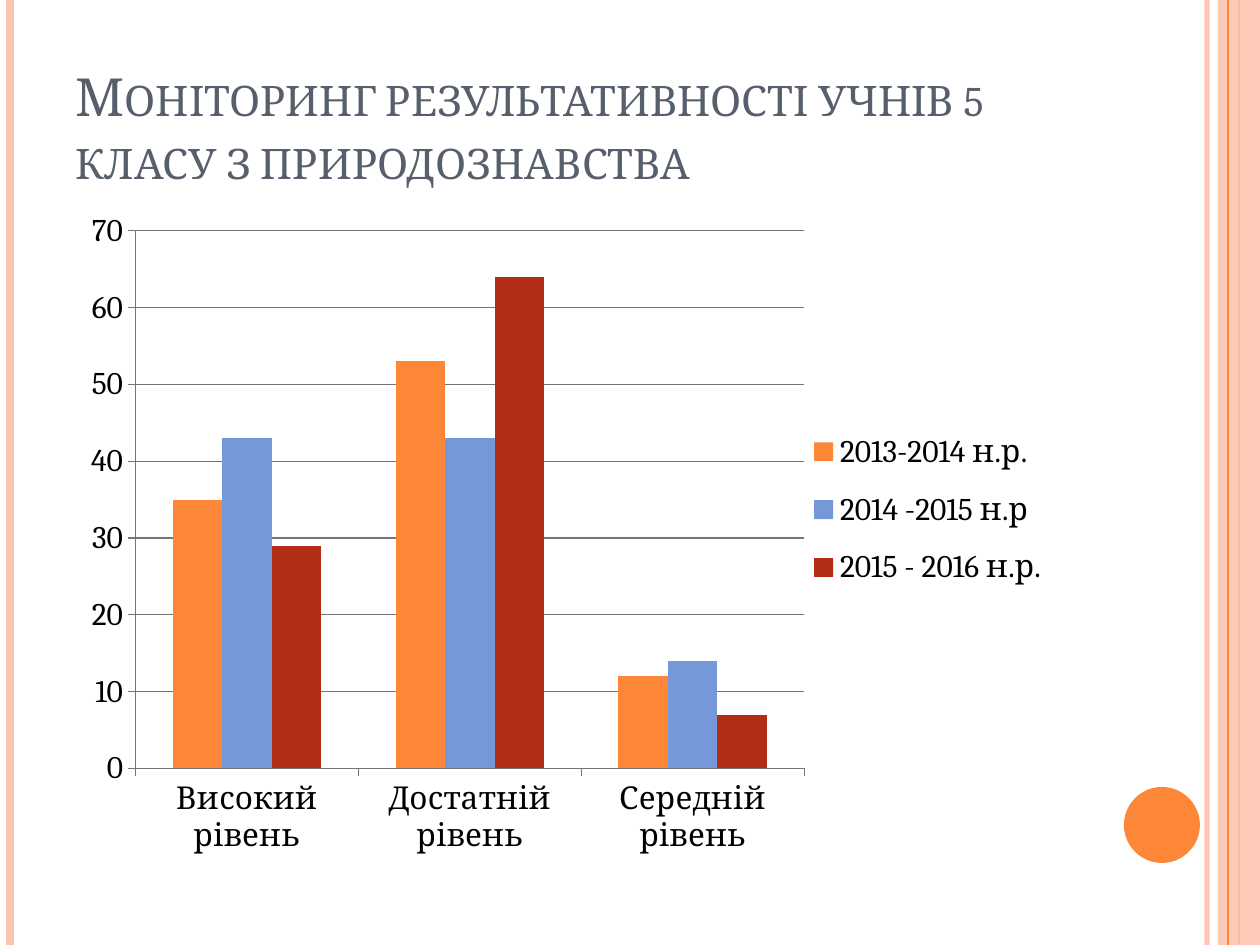
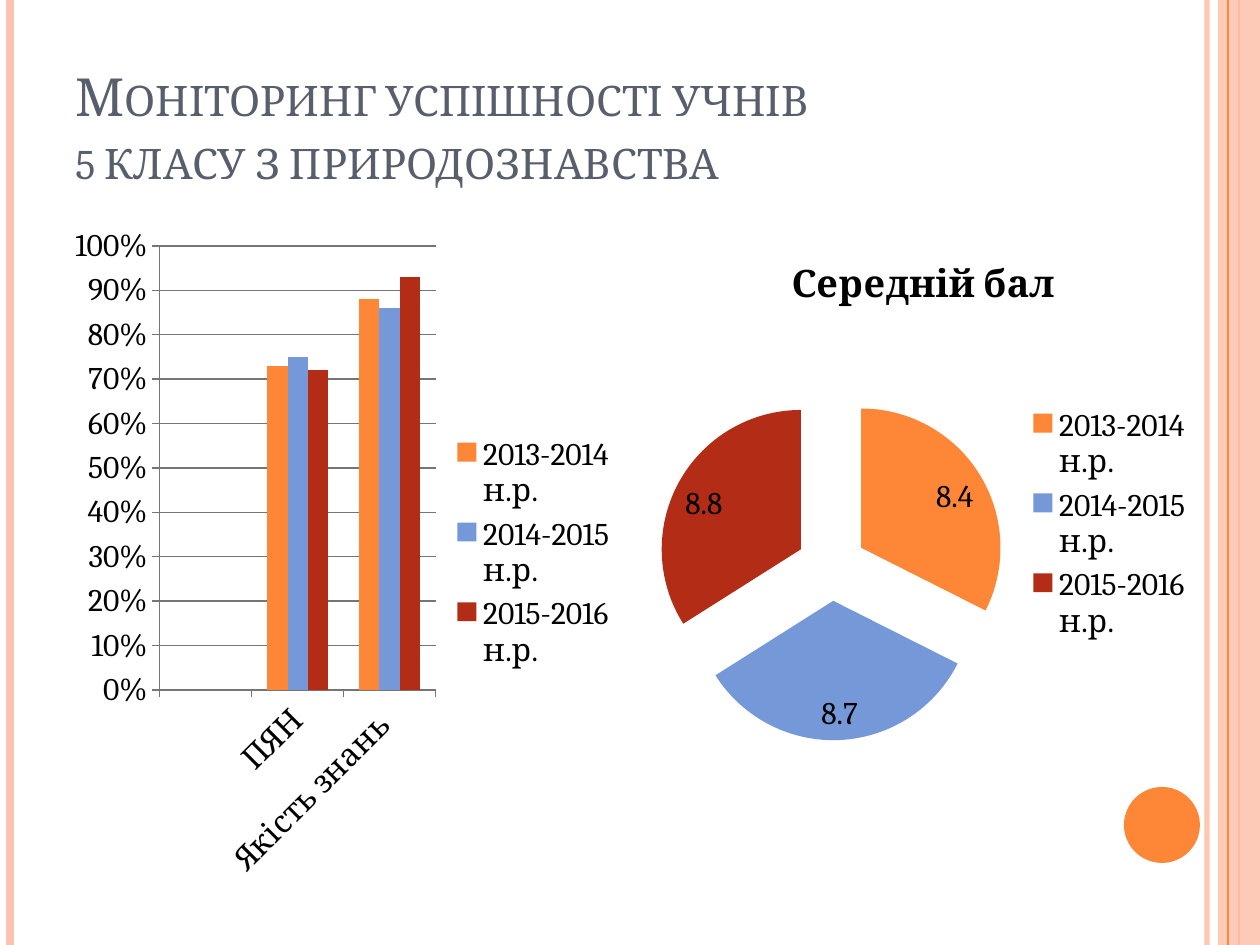
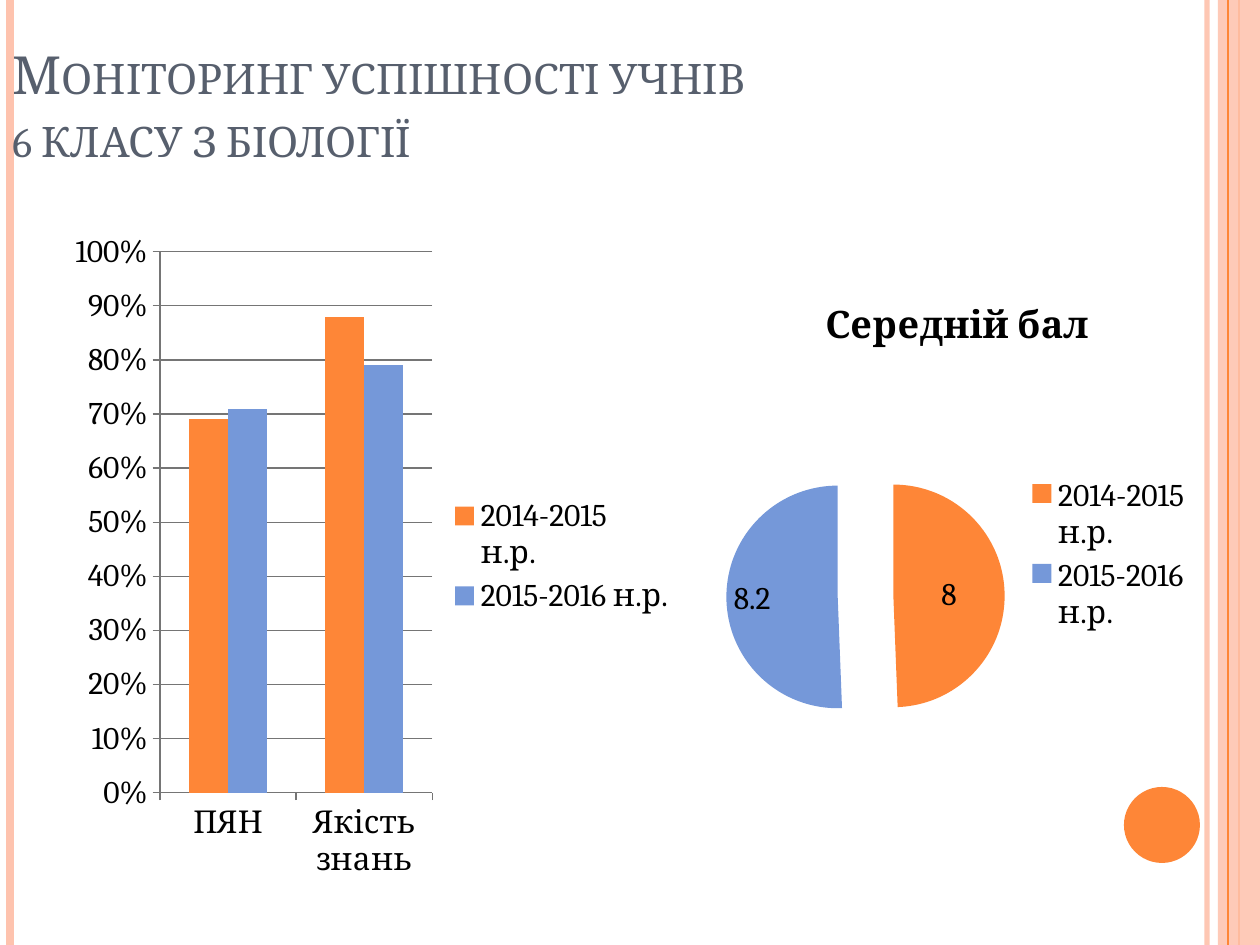
from lxml import etree
from pptx import Presentation
from pptx.chart.data import CategoryChartData
from pptx.dml.color import RGBColor
from pptx.enum.chart import XL_CHART_TYPE, XL_LABEL_POSITION, XL_LEGEND_POSITION, XL_TICK_MARK
from pptx.enum.shapes import MSO_CONNECTOR, MSO_SHAPE
from pptx.enum.text import MSO_ANCHOR, PP_ALIGN
from pptx.oxml.ns import qn
from pptx.util import Pt

EMU_PER_PX = 914400 / 126
SLIDE_WIDTH, SLIDE_HEIGHT = 1260, 945

WHITE = RGBColor(0xFF, 0xFF, 0xFF)
BLACK = RGBColor(0x00, 0x00, 0x00)
SLATE = RGBColor(0x57, 0x5F, 0x6D)
PEACH = RGBColor(0xFE, 0xC3, 0xAE)
ORANGE = RGBColor(0xFE, 0x86, 0x37)
BLUE = RGBColor(0x75, 0x98, 0xD9)
RED = RGBColor(0xB3, 0x2C, 0x16)
GREY = RGBColor(0x75, 0x75, 0x75)
SERIES_COLORS = (ORANGE, BLUE, RED)

FONT = "Cambria"
COLUMN, PIE = XL_CHART_TYPE.COLUMN_CLUSTERED, XL_CHART_TYPE.PIE
CENTER, INSIDE_END = XL_LABEL_POSITION.CENTER, XL_LABEL_POSITION.INSIDE_END
LEGEND_RIGHT = XL_LEGEND_POSITION.RIGHT
TICK_OUT = XL_TICK_MARK.OUTSIDE
STRAIGHT = MSO_CONNECTOR.STRAIGHT
RECTANGLE, OVAL = MSO_SHAPE.RECTANGLE, MSO_SHAPE.OVAL
LEFT, BOTTOM = PP_ALIGN.LEFT, MSO_ANCHOR.BOTTOM

TITLE_BOX = (63, 38, 1029, 158)
AVERAGE = "Середній бал"


def px(length):
    """Turn pixels into EMU."""
    return round(length * EMU_PER_PX)


def format_font(font, size, color=BLACK, bold=False):
    """Apply the deck font with a size, colour and weight."""
    font.name, font.size, font.bold = FONT, Pt(size), bold
    font.color.rgb = color


def write_text(frame, text, size=18, color=BLACK, bold=False, small_caps=False):
    """Write the lines of a text into the first paragraph of a frame."""
    paragraph = frame.paragraphs[0]
    paragraph.alignment = None if bold else LEFT
    for index, line in enumerate(text.split("\n")):
        if index:
            paragraph.add_line_break()
        run = paragraph.add_run()
        run.text = line
        format_font(run.font, size, color, bold)
        if small_caps:
            run._r.get_or_add_rPr().set("cap", "small")


def set_alpha(element, percent):
    """Make the solid colour inside an element partly transparent."""
    color = next(element.iter(qn("a:srgbClr")))
    etree.SubElement(color, qn("a:alpha")).set("val", str(percent * 1000))


def set_layout(parent, position, inner=False):
    """Fix the relative place of a plot area or legend."""
    layout = parent.find(qn("c:layout"))
    if layout is None:
        layout = etree.Element(qn("c:layout"))
        parent.insert(0 if inner else 1, layout)
    manual = etree.SubElement(layout, qn("c:manualLayout"))
    settings = [("layoutTarget", "inner")] if inner else []
    settings += [("xMode", "edge"), ("yMode", "edge"), *zip("xywh", position)]
    for name, value in settings:
        etree.SubElement(manual, qn("c:" + name)).set("val", str(value))


class Deck:
    """Hold the presentation, its style and the current slide."""

    def __init__(self):
        """Start an empty presentation of the right size."""
        self.presentation = Presentation()
        self.presentation.slide_width = px(SLIDE_WIDTH)
        self.presentation.slide_height = px(SLIDE_HEIGHT)
        self.slide = None

    def add_slide(self, title, box=TITLE_BOX):
        """Add a slide with the shared bands and a title."""
        self.slide = self.presentation.slides.add_slide(self.presentation.slide_layouts[6])
        background = self.slide.background.fill
        background.solid()
        background.fore_color.rgb = WHITE
        self.stripe(1207, PEACH, 3, alpha=93)
        self.stripe(10, PEACH, 4.5)
        self.stripe(1239, ORANGE, 1.5)
        self.shape(RECTANGLE, (1218, 0, 42, SLIDE_HEIGHT), PEACH, alpha=87)
        self.stripe(1228, ORANGE, 0.75)
        self.shape(OVAL, (1124, 787, 76, 76), ORANGE)
        self.title(title, box)

    def stripe(self, x, color, width, alpha=None):
        """Draw a full-height vertical line."""
        connector = self.slide.shapes.add_connector(STRAIGHT, px(x), 0, px(x), px(SLIDE_HEIGHT))
        connector.line.color.rgb = color
        connector.line.width = Pt(width)
        properties = connector._element.spPr
        if alpha:
            set_alpha(properties, alpha)
        etree.SubElement(properties, qn("a:effectLst"))

    def shape(self, kind, box, color, alpha=None):
        """Draw a filled shape without an outline."""
        shape = self.slide.shapes.add_shape(kind, *map(px, box))
        shape.shadow.inherit = False
        shape.fill.solid()
        shape.fill.fore_color.rgb = color
        shape.line.fill.background()
        if alpha:
            set_alpha(shape._element.spPr, alpha)

    def title(self, text, box):
        """Write the small-caps title, resting on the bottom of its box."""
        frame = self.slide.shapes.add_textbox(*map(px, box)).text_frame
        frame.word_wrap = True
        frame.vertical_anchor = BOTTOM
        write_text(frame, text, size=30, color=SLATE, small_caps=True)

    def chart(self, kind, box, categories, series, number_format="General"):
        """Add a chart with the shared font and a legend on the right."""
        data = CategoryChartData(number_format=number_format)
        data.categories = categories
        for name, values in series.items():
            data.add_series(name, values)
        chart = self.slide.shapes.add_chart(kind, *map(px, box), data).chart
        format_font(chart.font, 18)
        chart.has_title = False
        chart.has_legend = True
        chart.legend.position = LEGEND_RIGHT
        chart.legend.include_in_layout = False
        return chart

    def column_chart(self, box, categories, series, maximum, step, number_format="General"):
        """Add a clustered column chart."""
        chart = self.chart(COLUMN, box, categories, series, number_format)
        plot = chart.plots[0]
        plot.gap_width = 150
        plot.vary_by_categories = False
        for column, color in zip(plot.series, SERIES_COLORS):
            column.invert_if_negative = False
            column.format.fill.solid()
            column.format.fill.fore_color.rgb = color
        value_axis = chart.value_axis
        value_axis.minimum_scale, value_axis.maximum_scale = 0, maximum
        value_axis.major_unit = step
        value_axis.has_major_gridlines = True
        value_axis.tick_labels.number_format = number_format
        value_axis.tick_labels.number_format_is_linked = False
        for axis in (value_axis, chart.category_axis):
            axis.major_tick_mark = TICK_OUT
        for part in (value_axis, chart.category_axis, value_axis.major_gridlines):
            part.format.line.color.rgb = GREY
            part.format.line.width = Pt(0.75)
        return chart

    def percent_chart(self, box, categories, series):
        """Add a column chart on a scale up to 100%."""
        self.column_chart(box, categories, series, 1, 0.1, "0%")

    def average_pie(self, box, scores, label_positions):
        """Add an exploded pie of the average score in each year."""
        chart = self.chart(PIE, box, list(scores), {AVERAGE: list(scores.values())})
        chart.has_title = True
        write_text(chart.chart_title.text_frame, AVERAGE, size=21.6, bold=True)
        chart.chart_title.include_in_layout = False
        chart.plots[0].vary_by_categories = True
        series = chart.plots[0].series[0]
        explosion = etree.Element(qn("c:explosion"))
        explosion.set("val", "25")
        series._element.find(qn("c:tx")).addnext(explosion)
        for index, position in enumerate(label_positions):
            point = series.points[index]
            point.format.fill.solid()
            point.format.fill.fore_color.rgb = SERIES_COLORS[index]
            point.data_label.position = position


def main():
    """Build and save the three slides."""
    deck = Deck()

    deck.add_slide("Моніторинг результативності учнів 5 класу з природознавства")
    levels = deck.column_chart(
        (84, 204, 1029, 672),
        ["Високий рівень", "Достатній рівень", "Середній рівень"],
        {
            "2013-2014 н.р.": (35, 53, 12),
            "2014 -2015 н.р": (43, 43, 14),
            "2015 - 2016 н.р.": (29, 64, 7),
        },
        maximum=70,
        step=10,
    )
    plot_area = next(levels._chartSpace.iter(qn("c:plotArea")))
    set_layout(plot_area, (0.05, 0.04, 0.65, 0.8), inner=True)
    set_layout(levels.legend._element, (0.7, 0.31, 0.24, 0.29))

    deck.add_slide("Моніторинг успішності учнів\n5 класу з природознавства")
    deck.percent_chart(
        (64, 214, 566, 678),
        ["", "ПЯН", "Якість знань "],
        {
            "2013-2014 н.р.": (None, 0.73, 0.88),
            "2014-2015 н.р.": (None, 0.75, 0.86),
            "2015-2016 н.р.": (None, 0.72, 0.93),
        },
    )
    deck.average_pie(
        (640, 234, 566, 580),
        {"2013-2014 н.р.": 8.4, "2014-2015 н.р.": 8.7, "2015-2016 н.р.": 8.8},
        [INSIDE_END] * 3,
    )

    deck.add_slide("Моніторинг успішності учнів\n6 класу з біології", (0, 16, 1211, 158))
    deck.percent_chart(
        (63, 220, 626, 672),
        ["ПЯН", "Якість знань"],
        {"2014-2015 н.р.": (0.69, 0.88), "2015-2016 н.р.": (0.71, 0.79)},
    )
    deck.average_pie(
        (709, 275, 496, 559),
        {"2014-2015 н.р.": 8, "2015-2016 н.р.": 8.2},
        [CENTER, INSIDE_END],
    )

    deck.presentation.save("out.pptx")


if __name__ == "__main__":
    main()
